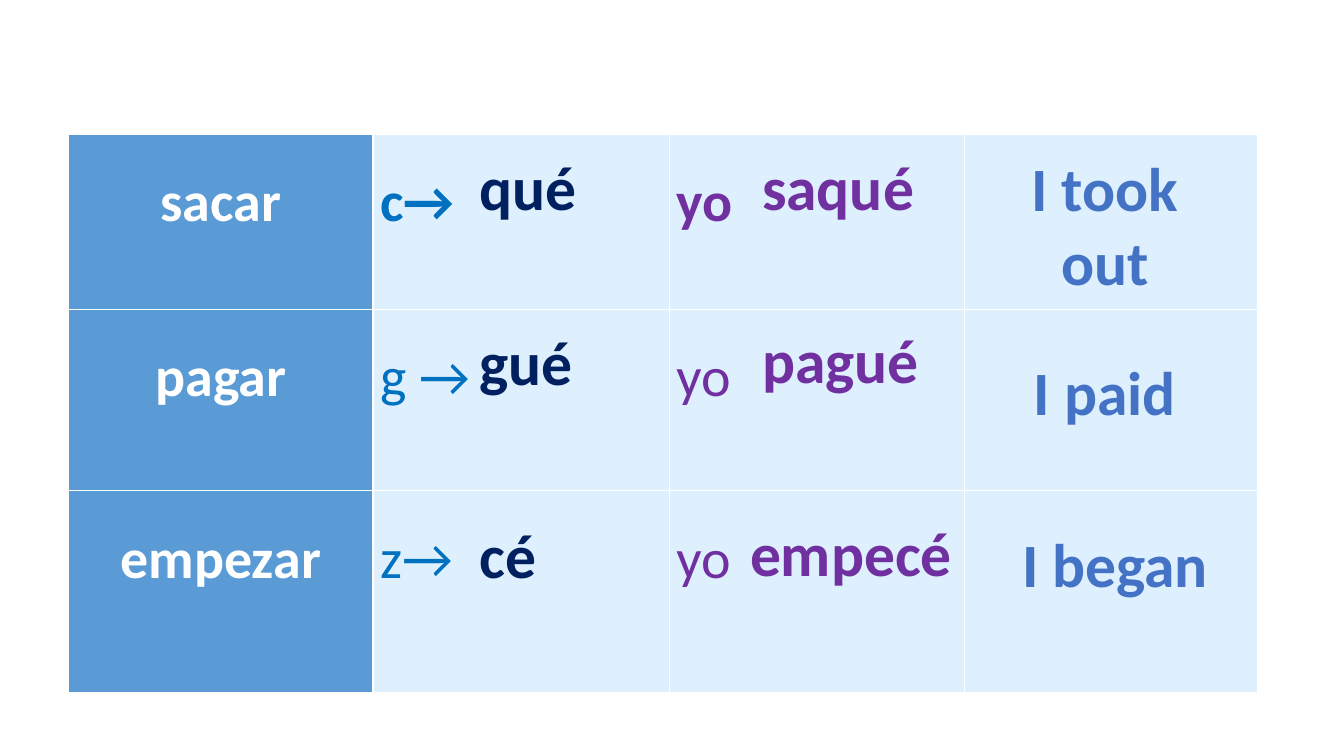
"""Build a slide with a table of Spanish -car, -gar, -zar preterite spelling changes."""
from pptx import Presentation
from pptx.dml.color import RGBColor
from pptx.enum.text import MSO_AUTO_SIZE, PP_ALIGN
from pptx.util import Inches, Pt


def color(value):
    return RGBColor.from_string(value)


def style_text(paragraph, text, size, value, bold, alignment):
    paragraph.text = text
    paragraph.alignment = alignment
    paragraph.font.name = "Calibri"
    paragraph.font.size = Pt(size)
    paragraph.font.bold = bold
    paragraph.font.color.rgb = color(value)


presentation = Presentation()
presentation.slide_width = Inches(13.33)
presentation.slide_height = Inches(7.5)
slide = presentation.slides.add_slide(presentation.slide_layouts[6])

verbs = [
    ("sacar", "c→", "yo", ""),
    ("pagar", "g →", "yo", ""),
    ("empezar", "z→", "yo", ""),
]
column_widths = [3.02, 2.94, 2.93, 2.9]
row_heights = [1.74, 1.8, 2]
column_colors = ["FFFFFF", "0070C0", "7030A0", "4472C4"]

table = slide.shapes.add_table(
    3, 4, Inches(0.68), Inches(1.33), Inches(11.79), Inches(5.54)
).table
table.horz_banding = False
for column, width in zip(table.columns, column_widths):
    column.width = Inches(width)
for row, height in zip(table.rows, row_heights):
    row.height = Inches(height)

for row_index, words in enumerate(verbs):
    for column_index, word in enumerate(words):
        cell = table.cell(row_index, column_index)
        is_verb = column_index == 0
        cell.fill.solid()
        cell.fill.fore_color.rgb = color("5B9BD5" if is_verb else "DEF0FE")
        if not word:
            continue
        cell.margin_left = cell.margin_right = Inches(0.07)
        cell.margin_top = cell.margin_bottom = 0
        paragraph = cell.text_frame.paragraphs[0]
        style_text(paragraph, word, 40, column_colors[column_index],
                   is_verb or row_index == 0,
                   PP_ALIGN.CENTER if is_verb else PP_ALIGN.LEFT)
        paragraph.line_spacing = 1.5
        paragraph.space_after = Pt(8)

answer_groups = [
    ("002060", PP_ALIGN.LEFT, [
        ("qué", 4.66, 1.43, 1.6, 0.84),
        ("gué", 4.66, 3.16, 1.6, 1.58),
        ("cé", 4.66, 5.08, 1.6, 1.58),
    ]),
    ("7030A0", PP_ALIGN.LEFT, [
        ("saqué", 7.46, 1.43, 1.88, 0.84),
        ("pagué", 7.46, 3.14, 1.88, 0.84),
        ("empecé", 7.34, 5.06, 2.21, 0.84),
    ]),
    ("4472C4", PP_ALIGN.CENTER, [
        ("I took out", 9.8, 1.44, 2.32, 1.58),
        ("I paid", 9.8, 3.46, 2.32, 0.84),
        ("I began", 9.9, 5.17, 2.32, 0.84),
    ]),
]
for text_color, alignment, answers in answer_groups:
    for answer, left, top, width, height in answers:
        text_frame = slide.shapes.add_textbox(
            Inches(left), Inches(top), Inches(width), Inches(height)
        ).text_frame
        text_frame.word_wrap = True
        text_frame.auto_size = MSO_AUTO_SIZE.SHAPE_TO_FIT_TEXT
        style_text(text_frame.paragraphs[0], answer, 44, text_color, True, alignment)

presentation.save("out.pptx")
